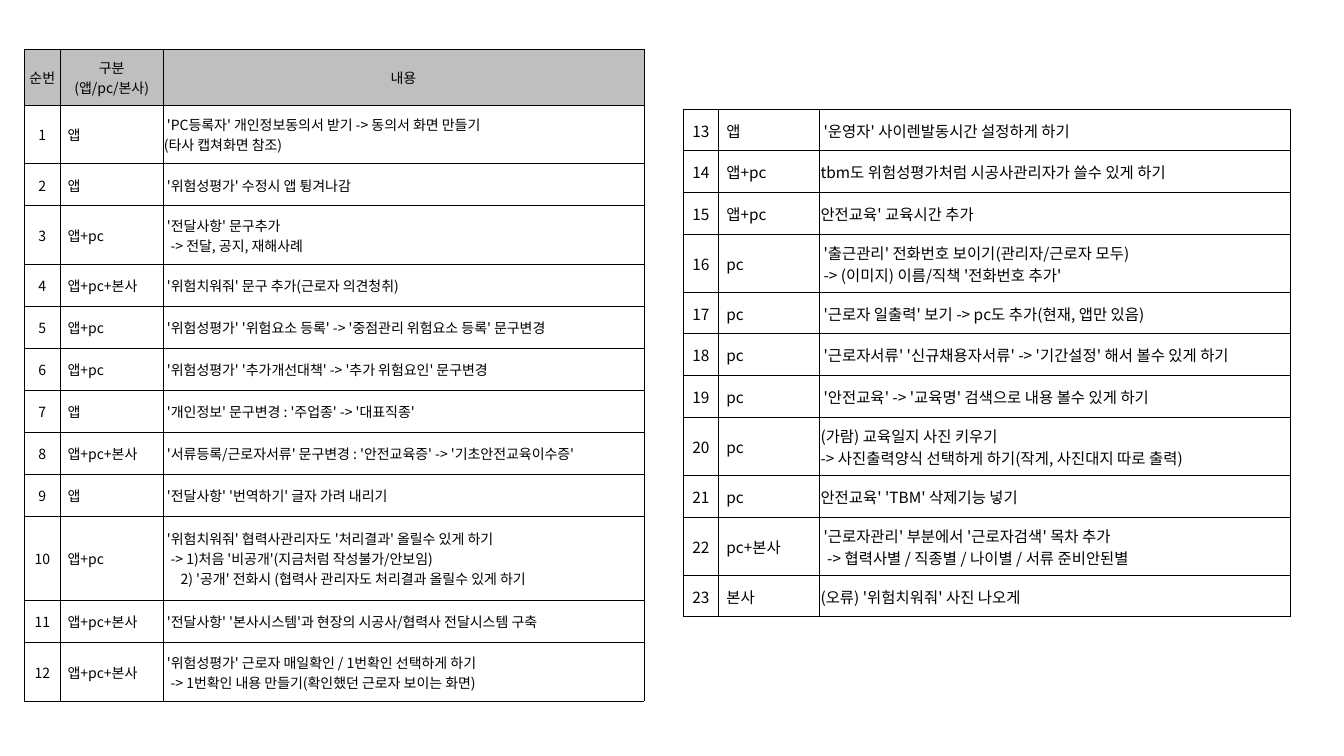
from pptx import Presentation
from pptx.dml.color import RGBColor
from pptx.enum.text import MSO_ANCHOR, PP_ALIGN
from pptx.oxml import parse_xml
from pptx.oxml.ns import nsdecls
from pptx.oxml.xmlchemy import OxmlElement
from pptx.util import Pt

BLACK = RGBColor(0x00, 0x00, 0x00)
HEADER_GRAY = RGBColor(0xBF, 0xBF, 0xBF)
FONT = "Noto Sans CJK KR"
QUOTE, ARROW, SUBITEM = 2.2, 4.8, 12  # line indents

# Requests: category, then (indent, text) for each line
HEADER = [
    [(0, "순번")],
    [(0, "구분"), (0, "(앱/pc/본사)")],
    [(0, "내용")],
]
FIRST_REQUESTS = [
    ("앱", [(QUOTE, "'PC등록자' 개인정보동의서 받기 -> 동의서 화면 만들기"),
           (0, "(타사 캡쳐화면 참조)")]),
    ("앱", [(QUOTE, "'위험성평가' 수정시 앱 튕겨나감")]),
    ("앱+pc", [(QUOTE, "'전달사항' 문구추가"),
              (ARROW, "-> 전달, 공지, 재해사례")]),
    ("앱+pc+본사", [(QUOTE, "'위험치워줘' 문구 추가(근로자 의견청취)")]),
    ("앱+pc", [(QUOTE, "'위험성평가' '위험요소 등록' -> '중점관리 위험요소 등록' 문구변경")]),
    ("앱+pc", [(QUOTE, "'위험성평가' '추가개선대책' -> '추가 위험요인' 문구변경")]),
    ("앱", [(QUOTE, "'개인정보' 문구변경 : '주업종' -> '대표직종'")]),
    ("앱+pc+본사", [(QUOTE, "'서류등록/근로자서류' 문구변경 : '안전교육증' -> '기초안전교육이수증'")]),
    ("앱", [(QUOTE, "'전달사항' '번역하기' 글자 가려 내리기")]),
    ("앱+pc", [(QUOTE, "'위험치워줘' 협력사관리자도 '처리결과' 올릴수 있게 하기"),
              (ARROW, "-> 1)처음 '비공개'(지금처럼 작성불가/안보임)"),
              (SUBITEM, "2) '공개' 전화시 (협력사 관리자도 처리결과 올릴수 있게 하기")]),
    ("앱+pc+본사", [(QUOTE, "'전달사항' '본사시스템'과 현장의 시공사/협력사 전달시스템 구축")]),
    ("앱+pc+본사", [(QUOTE, "'위험성평가' 근로자 매일확인 / 1번확인 선택하게 하기"),
                 (ARROW, "-> 1번확인 내용 만들기(확인했던 근로자 보이는 화면)")]),
]
SECOND_REQUESTS = [
    ("앱", [(QUOTE, "'운영자' 사이렌발동시간 설정하게 하기")]),
    ("앱+pc", [(0, "tbm도 위험성평가처럼 시공사관리자가 쓸수 있게 하기")]),
    ("앱+pc", [(0, "안전교육' 교육시간 추가")]),
    ("pc", [(QUOTE, "'출근관리' 전화번호 보이기(관리자/근로자 모두)"),
            (QUOTE, "-> (이미지) 이름/직책 '전화번호 추가'")]),
    ("pc", [(QUOTE, "'근로자 일출력' 보기 -> pc도 추가(현재, 앱만 있음)")]),
    ("pc", [(QUOTE, "'근로자서류' '신규채용자서류' -> '기간설정' 해서 볼수 있게 하기")]),
    ("pc", [(QUOTE, "'안전교육' -> '교육명' 검색으로 내용 볼수 있게 하기")]),
    ("pc", [(0, "(가람) 교육일지 사진 키우기"),
            (0, "-> 사진출력양식 선택하게 하기(작게, 사진대지 따로 출력)")]),
    ("pc", [(0, "안전교육' 'TBM' 삭제기능 넣기")]),
    ("pc+본사", [(QUOTE, "'근로자관리' 부분에서 '근로자검색' 목차 추가"),
               (ARROW, "-> 협력사별 / 직종별 / 나이별 / 서류 준비안된별")]),
    ("본사", [(0, "(오류) '위험치워줘' 사진 나오게")]),
]


def write_cell(cell, lines, size, align=PP_ALIGN.LEFT, fill=None):
    cell.vertical_anchor = MSO_ANCHOR.MIDDLE
    cell.margin_left = cell.margin_right = cell.margin_top = Pt(0.7)
    cell.margin_bottom = 0
    properties = cell._tc.get_or_add_tcPr()
    for side in ("lnL", "lnR", "lnT", "lnB"):
        properties.append(parse_xml(
            f'<a:{side} {nsdecls("a")} w="{Pt(0.5)}"><a:solidFill>'
            f'<a:srgbClr val="{BLACK}"/></a:solidFill></a:{side}>'))
    if fill is None:
        cell.fill.background()
    else:
        cell.fill.solid()
        cell.fill.fore_color.rgb = fill
    frame = cell.text_frame
    for position, (indent, text) in enumerate(lines):
        paragraph = frame.add_paragraph() if position else frame.paragraphs[0]
        paragraph.alignment = align
        if indent:
            paragraph._p.get_or_add_pPr().set("marL", str(Pt(indent)))
        run = paragraph.add_run()
        run.text = text
        run.font.size = Pt(size)
        run.font.name = FONT
        run.font.color.rgb = BLACK
        east_asian = OxmlElement("a:ea")
        east_asian.set("typeface", FONT)
        run.font._element.append(east_asian)


presentation = Presentation()
presentation.slide_width = Pt(960)
presentation.slide_height = Pt(540)
slide = presentation.slides.add_slide(presentation.slide_layouts[6])

# left, top, column widths, row height by line count, size, first number, header, requests
request_lists = [
    (17.3, 35.3, (25.9, 73.2, 343.7), {1: 30, 2: 42, 3: 60}, 10, 1, HEADER, FIRST_REQUESTS),
    (488, 78, (25.2, 72.2, 336.2), {1: 29.7, 2: 41.7}, 11, 13, None, SECOND_REQUESTS),
]
for left, top, widths, heights, size, first_number, header, requests in request_lists:
    row_heights = [heights[len(lines)] for _, lines in requests]
    if header:
        row_heights.insert(0, 39.6)
    request_table = slide.shapes.add_table(
        len(row_heights), len(widths), Pt(left), Pt(top),
        Pt(sum(widths)), Pt(sum(row_heights))).table
    request_table.first_row = request_table.horz_banding = False
    for column, width in zip(request_table.columns, widths):
        column.width = Pt(width)
    for row, height in zip(request_table.rows, row_heights):
        row.height = Pt(height)

    # Header row
    if header:
        for column_index, lines in enumerate(header):
            write_cell(request_table.cell(0, column_index), lines, size,
                       align=PP_ALIGN.CENTER, fill=HEADER_GRAY)

    # Numbered requests
    first_row = 1 if header else 0
    for offset, (category, lines) in enumerate(requests):
        number_cell, category_cell, content_cell = request_table.rows[first_row + offset].cells
        write_cell(number_cell, [(0, str(first_number + offset))], size, align=PP_ALIGN.CENTER)
        write_cell(category_cell, [(2 * 0.224 * size, category)], size)
        write_cell(content_cell, lines, size)

presentation.save("out.pptx")
